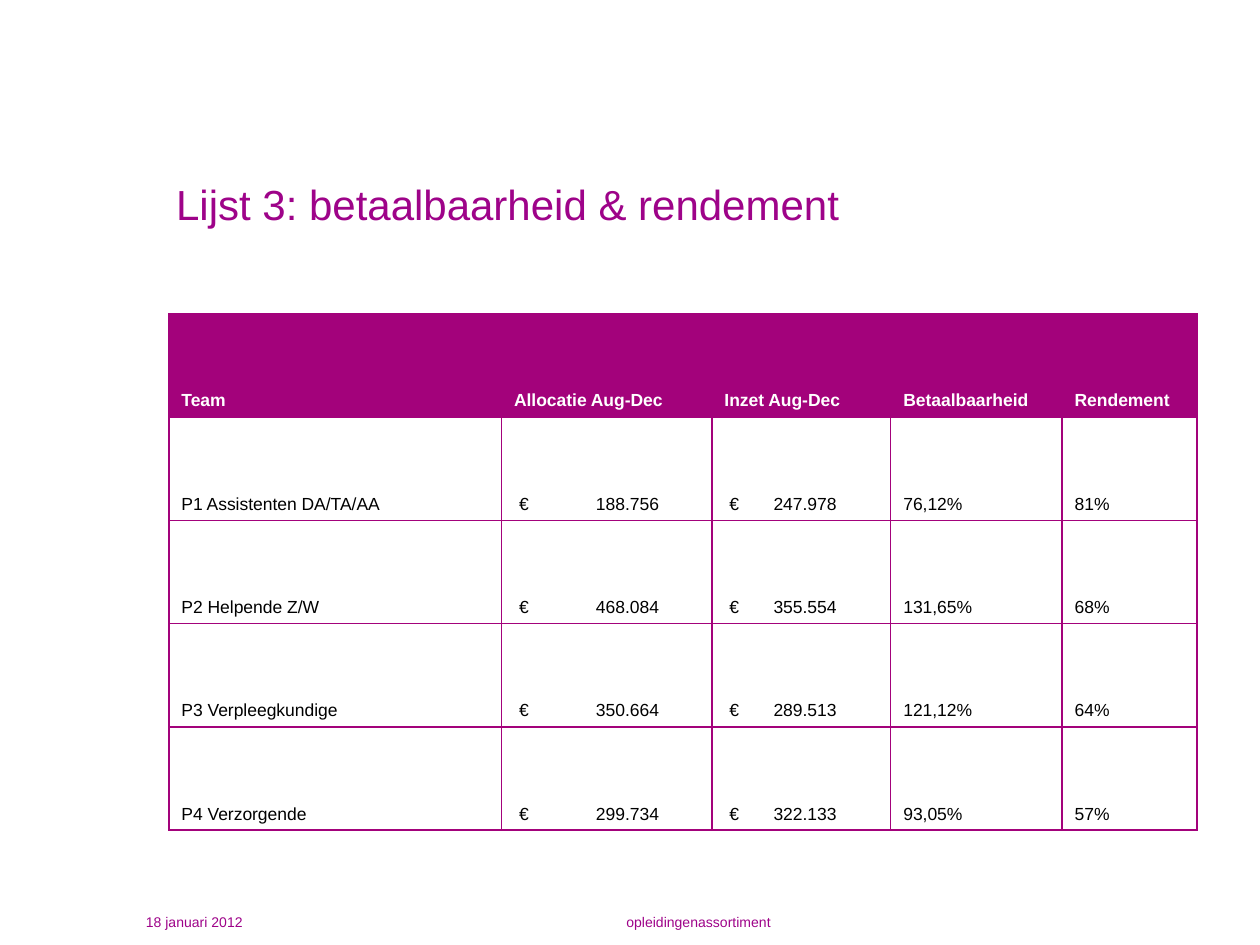
import dataclasses

import lxml.etree
import pptx
import pptx.dml.color
import pptx.enum.text
import pptx.oxml.ns
import pptx.util

Inches = pptx.util.Inches
Pt = pptx.util.Pt
ALIGN = pptx.enum.text.PP_ALIGN
ANCHOR = pptx.enum.text.MSO_ANCHOR


@dataclasses.dataclass(frozen=True)
class Theme:
    font: str = "Arial"
    title_color: str = "9E0389"
    table_color: str = "A3027B"
    header_text: str = "FFFFFF"
    body_text: str = "000000"
    title_size: int = 24
    table_size: int = 10
    footer_size: int = 8
    border_width: int = 1


def rgb(value):
    return pptx.dml.color.RGBColor.from_string(value)


def add_element(parent, tag, **attributes):
    element = lxml.etree.SubElement(parent, pptx.oxml.ns.qn(tag))
    for name, value in attributes.items():
        element.set(name, str(value))
    return element


def write_text(tf, text, *, font, size, color, bold=False,
               align=ALIGN.LEFT, anchor=ANCHOR.TOP, right_tab=None):
    tf.word_wrap = True
    tf.vertical_anchor = anchor
    p = tf.paragraphs[0]
    p.alignment = align
    if right_tab:
        tabs = add_element(p._p.get_or_add_pPr(), "a:tabLst")
        add_element(tabs, "a:tab", pos=Inches(right_tab), algn="r")
    r = p.add_run()
    r.text = text
    r.font.name = font
    r.font.size = Pt(size)
    r.font.bold = bold
    r.font.color.rgb = rgb(color)


class SlideBuilder:
    def __init__(self, slide, theme):
        self.s = slide
        self.theme = theme

    def text(self, text, left, top, width, height, size, **style):
        sp = self.s.shapes.add_textbox(
            Inches(left), Inches(top), Inches(width), Inches(height))
        write_text(sp.text_frame, text, font=self.theme.font, size=size,
                   color=self.theme.title_color, **style)

    def borders(self, cell):
        properties = cell._tc.get_or_add_tcPr()
        for position, side in enumerate(("a:lnL", "a:lnR", "a:lnT", "a:lnB")):
            line = add_element(properties, side, w=Pt(self.theme.border_width))
            fill = add_element(line, "a:solidFill")
            add_element(fill, "a:srgbClr", val=self.theme.table_color)
            properties.insert(position, line)

    def table(self, rows, left, top, widths, row_height, amount_tabs):
        table = self.s.shapes.add_table(
            len(rows), len(widths), Inches(left), Inches(top),
            Inches(sum(widths)), Inches(row_height * len(rows))).table
        table.first_row = False
        table.horz_banding = False
        for column, width in zip(table.columns, widths):
            column.width = Inches(width)
        for i, values in enumerate(rows):
            table.rows[i].height = Inches(row_height)
            for j, value in enumerate(values):
                self.cell(table.cell(i, j), value, i == 0, amount_tabs.get(j))

    def cell(self, cell, text, header, amount_tab):
        theme = self.theme
        right_tab = None if header else amount_tab
        if header:
            cell.fill.solid()
            cell.fill.fore_color.rgb = rgb(theme.table_color)
        else:
            cell.fill.background()
        if right_tab:
            text = f"€\t{text}"
            cell.margin_left = Inches(0.14)
        cell.vertical_anchor = ANCHOR.BOTTOM
        write_text(cell.text_frame, text, font=theme.font,
                   size=theme.table_size, bold=header, right_tab=right_tab,
                   color=theme.header_text if header else theme.body_text)
        self.borders(cell)


def main():
    prs = pptx.Presentation()
    prs.slide_width = Inches(10)
    prs.slide_height = Inches(7.5)
    theme = Theme()
    builder = SlideBuilder(prs.slides.add_slide(prs.slide_layouts[6]), theme)

    builder.text("Lijst 3: betaalbaarheid & rendement", 1.3, 0.99, 8.2, 1.25,
                 theme.title_size, anchor=ANCHOR.MIDDLE)
    rows = [
        ("Team", "Allocatie Aug-Dec", "Inzet Aug-Dec", "Betaalbaarheid", "Rendement"),
        ("P1 Assistenten DA/TA/AA", "188.756", "247.978", "76,12%", "81%"),
        ("P2 Helpende Z/W", "468.084", "355.554", "131,65%", "68%"),
        ("P3 Verpleegkundige", "350.664", "289.513", "121,12%", "64%"),
        ("P4 Verzorgende", "299.734", "322.133", "93,05%", "57%"),
    ]
    builder.table(rows, 1.34, 2.49, (2.64, 1.67, 1.42, 1.36, 1.07), 0.82,
                  amount_tabs={1: 1.11, 2: 0.85})
    builder.text("18 januari 2012", 1.06, 7.2, 2.2, 0.22, theme.footer_size)
    builder.text("opleidingenassortiment", 3.22, 7.2, 4.65, 0.22,
                 theme.footer_size, align=ALIGN.CENTER)

    prs.save("out.pptx")


if __name__ == "__main__":
    main()
